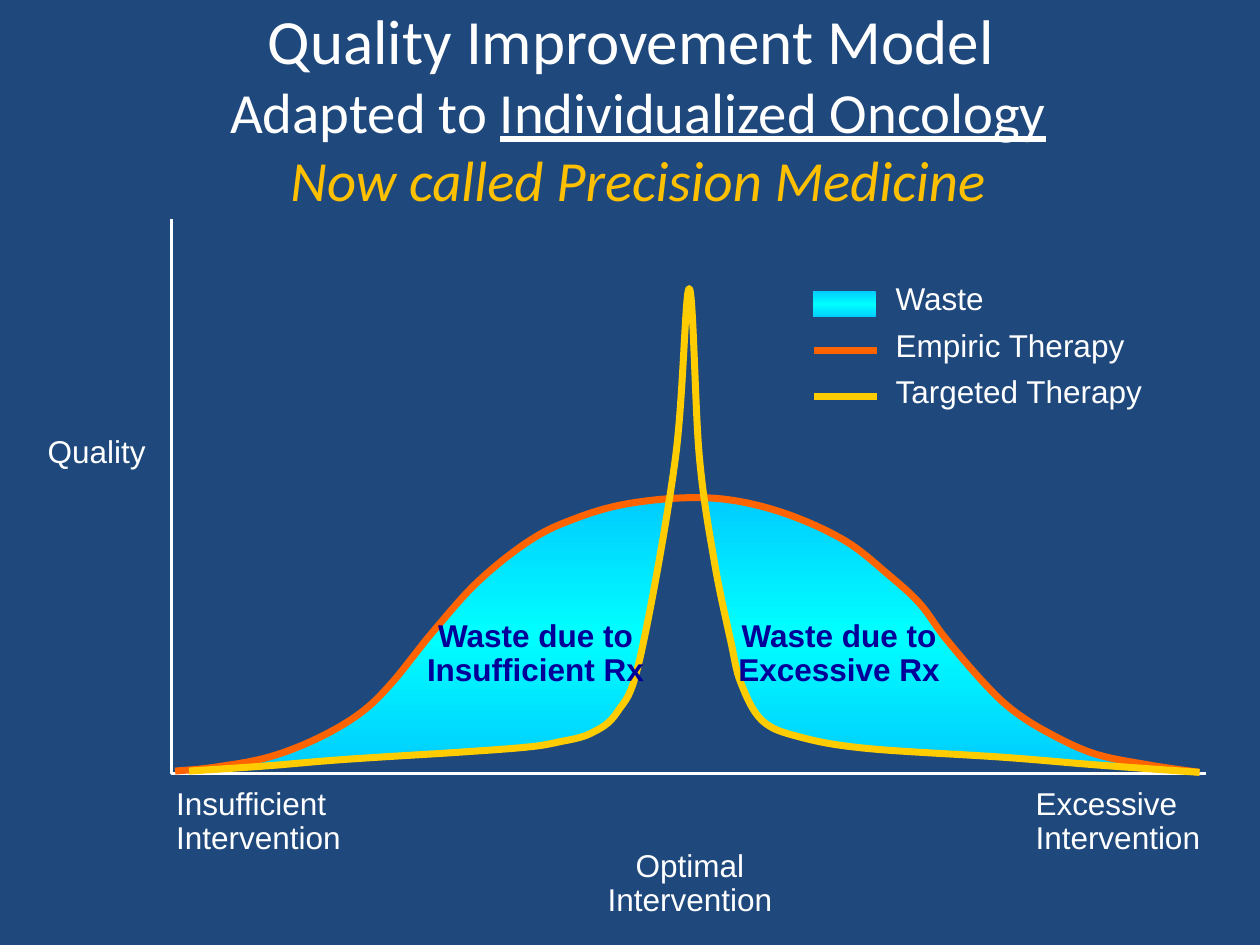
from copy import deepcopy

from lxml import etree
from pptx import Presentation
from pptx.dml.color import RGBColor
from pptx.enum.shapes import MSO_CONNECTOR, MSO_SHAPE
from pptx.enum.text import MSO_ANCHOR, MSO_AUTO_SIZE, PP_ALIGN
from pptx.oxml.ns import qn
from pptx.util import Inches, Pt

LEFT, CENTER = PP_ALIGN.LEFT, PP_ALIGN.CENTER
MIDDLE = MSO_ANCHOR.MIDDLE
FIT_SHAPE, NO_FIT = MSO_AUTO_SIZE.SHAPE_TO_FIT_TEXT, MSO_AUTO_SIZE.NONE
STRAIGHT, RECTANGLE = MSO_CONNECTOR.STRAIGHT, MSO_SHAPE.RECTANGLE

# The page is a grid of 100 columns and 75 rows
CELL = Inches(0.1)
COLUMNS, ROWS = 100, 75

NAVY, WHITE, GOLD, INK = "1F497D", "FFFFFF", "FFC000", "000099"
EMPIRIC, TARGETED = "FF6400", "FFCC00"
WASTE_EDGE, WASTE_CORE = "00CCFF", "00FFFF"

# Outlines in columns and rows of the chart box
AXES = [(13.6, 7.4), (13.6, 51.4), (95.7, 51.4)]
WASTE_LEFT = [
    (16.1, 50.9), (17.8, 50.7), (20.4, 50.3), (22.9, 49.6), (24.5, 49),
    (26.7, 47.8), (28.8, 46.4), (30.2, 45.1), (31.8, 43.4), (33.1, 41.7),
    (34.7, 40), (36.2, 38.1), (38.7, 35.6), (40.9, 33.8), (42.9, 32.5),
    (45.2, 31.3), (47.4, 30.7), (49, 30.2), (50.6, 30), (53, 29.7),
    (52.4, 33.9), (51.5, 38.9), (50.6, 43), (49.7, 45.4), (48.8, 46.8),
    (46.5, 48.4), (43.8, 49.1), (39.6, 49.6), (35, 49.9), (29.7, 50.2),
    (24.8, 50.5), (21.1, 50.9), (18.2, 51.1)]
MIRROR_SUM, MIRROR_RISE = 108.9, 0.1
WASTE_RIGHT = [(MIRROR_SUM - x, y - MIRROR_RISE) for x, y in WASTE_LEFT]
EMPIRIC_KNOTS = [
    (13.9, 51.2), (17, 50.9), (21.3, 50.1), (25.2, 48.6), (28.6, 46.6),
    (31.1, 44.2), (34.4, 40.1), (38, 36.1), (42.2, 32.8), (45.8, 31.1),
    (49.7, 30), (54.6, 29.5), (58.7, 29.8), (63, 31), (67.2, 33),
    (70.5, 35.6), (73, 37.9), (75, 40.6), (78, 44.1), (80.3, 46.3),
    (83.1, 48.1), (86.8, 49.8), (91.1, 50.7), (95.2, 51.3)]
TARGETED_KNOTS = [
    (15, 51.2), (21, 50.8), (25.7, 50.4), (30, 50.1), (36.5, 49.7),
    (41.8, 49.3), (44.3, 48.9), (46.9, 48.2), (49, 46.5), (50.8, 42.2),
    (53.6, 26.4), (54.7, 12.9), (55.5, 26.2), (56.7, 34.6), (58, 40.9),
    (58.8, 44.2), (60.5, 47.2), (63.5, 48.5), (68.8, 49.4), (79.6, 50.1),
    (86.9, 50.7), (95.2, 51.3)]


def color(hex_code):
    return RGBColor.from_string(hex_code)


def place(box, column, row):
    """Turn a grid position inside a box into a position on the page."""
    return round((box[0] + column) * CELL), round((box[1] + row) * CELL)


def smooth(shape):
    """Turn the straight segments of an outline into one smooth curve."""
    knots = [(int(point.get("x")), int(point.get("y")))
             for point in shape._element.iter(qn("a:pt"))]
    ends = [knots[0], *knots, knots[-1]]
    segments = list(shape._element.iter(qn("a:lnTo")))
    for segment, a, b, c, d in zip(segments, ends, ends[1:], ends[2:], ends[3:]):
        first = [q + (r - p) / 6 for p, q, r in zip(a, b, c)]
        second = [r - (s - q) / 6 for q, r, s in zip(b, c, d)]
        curve = etree.Element(qn("a:cubicBezTo"))
        for x, y in (first, second, c):
            etree.SubElement(curve, qn("a:pt"), x=str(round(x)), y=str(round(y)))
        segment.getparent().replace(segment, curve)


def add_outline(page, box, points, close=False):
    spots = [place(box, *point) for point in points]
    builder = page.shapes.build_freeform(*spots[0], scale=1.0)
    builder.add_line_segments(spots[1:], close=close)
    shape = builder.convert_to_shape()
    shape.shadow.inherit = False
    return shape


def add_stroke(page, box, points, hex_code, width):
    shape = add_outline(page, box, points)
    shape.fill.background()
    shape.line.color.rgb = color(hex_code)
    shape.line.width = Pt(width)
    return shape


def fill_waste(shape):
    """Vertical gradient, brightest in the middle."""
    shape.shadow.inherit = False
    shape.line.fill.background()
    shape.fill.gradient()
    shape.fill.gradient_angle = 270
    for stop, position in zip(shape.fill.gradient_stops, (0, 1)):
        stop.color.rgb = color(WASTE_EDGE)
        stop.position = position
    stop_list = next(shape._element.iter(qn("a:gsLst")))
    core = deepcopy(stop_list[0])
    core.set("pos", "50000")
    next(core.iter(qn("a:srgbClr"))).set("val", WASTE_CORE)
    stop_list.insert(1, core)


def add_label(page, box, area, lines, align=LEFT, hex_code=WHITE, bold=False, gap=0):
    column, row, width, height = area
    frame = page.shapes.add_textbox(
        *place(box, column, row), round(width * CELL), round(height * CELL)).text_frame
    frame.word_wrap = False
    frame.auto_size = FIT_SHAPE
    for index, line in enumerate(lines):
        para = frame.add_paragraph() if index else frame.paragraphs[0]
        para.alignment = align
        para.line_spacing = 0.9
        para.space_before = Pt(gap)
        span = para.add_run()
        span.text = line
        span.font.name = "Arial"
        span.font.size = Pt(18)
        span.font.bold = bold
        span.font.color.rgb = color(hex_code)


def add_title(page, box):
    title = page.shapes.title
    title.left, title.top = place(box, 0, 0)
    title.width, title.height = (round(size * CELL) for size in box[2:])
    frame = title.text_frame
    frame.auto_size = NO_FIT
    frame.vertical_anchor = MIDDLE
    para = frame.paragraphs[0]
    para.alignment = CENTER
    spans = [("Quality Improvement Model ", 36, WHITE, False, False, True),
             ("Adapted to ", 32.4, WHITE, False, False, False),
             ("Individualized Oncology", 32.4, WHITE, True, False, True),
             ("Now called Precision Medicine", 32.4, GOLD, False, True, False)]
    for text, size, hex_code, underline, italic, line_end in spans:
        span = para.add_run()
        span.text = text
        span.font.name = "Calibri"
        span.font.size = Pt(size)
        span.font.color.rgb = color(hex_code)
        span.font.underline = underline
        span.font.italic = italic
        if line_end:
            para.add_line_break()


def add_chart_area(page, box):
    # Axes, waste areas, then the two therapy curves
    add_stroke(page, box, AXES, WHITE, 1.5)
    for points in (WASTE_LEFT, WASTE_RIGHT):
        fill_waste(add_outline(page, box, points, close=True))
    for knots, hex_code in ((EMPIRIC_KNOTS, EMPIRIC), (TARGETED_KNOTS, TARGETED)):
        smooth(add_stroke(page, box, knots, hex_code, 4))

    # Labels inside the areas and along the axes
    add_label(page, box, (57.6, 38.7, 18, 6.4), ["Waste due to", "Excessive Rx"],
              CENTER, INK, True)
    add_label(page, box, (32.9, 38.7, 19.2, 6.4), ["Waste due to", "Insufficient Rx"],
              CENTER, INK, True)
    for column, row, word, align in ((47.2, 57, "Optimal", CENTER),
                                     (81.2, 52.1, "Excessive", LEFT),
                                     (13, 52.1, "Insufficient", LEFT)):
        add_label(page, box, (column, row, 15.1, 6.4), [word, "Intervention"], align)
    add_label(page, box, (2.8, 24.1, 9.8, 3.7), ["Quality"])


def add_legend(page, box):
    for row, hex_code in ((5.8, EMPIRIC), (9.5, TARGETED)):
        key = page.shapes.add_connector(
            STRAIGHT, *place(box, 0.1, row), *place(box, 5.1, row))
        key.line.color.rgb = color(hex_code)
        key.line.width = Pt(4)
        etree.SubElement(key._element.spPr, qn("a:effectLst"))
    fill_waste(page.shapes.add_shape(
        RECTANGLE, *place(box, 0, 1.1), 5 * CELL, round(2.1 * CELL)))
    add_label(page, box, (5.6, 0, 21.9, 11.5),
              ["Waste", "Empiric Therapy", "Targeted Therapy"], gap=7.2)


def main():
    deck = Presentation()
    deck.slide_width, deck.slide_height = COLUMNS * CELL, ROWS * CELL
    page = deck.slides.add_slide(deck.slide_layouts[5])
    page.background.fill.solid()
    page.background.fill.fore_color.rgb = color(NAVY)
    add_title(page, (3.1, 2.3, 95.1, 12.4))
    add_chart_area(page, (0, 10, 100, 65))
    add_legend(page, (64.5, 22, 27.5, 11.5))
    deck.save("out.pptx")


if __name__ == "__main__":
    main()
